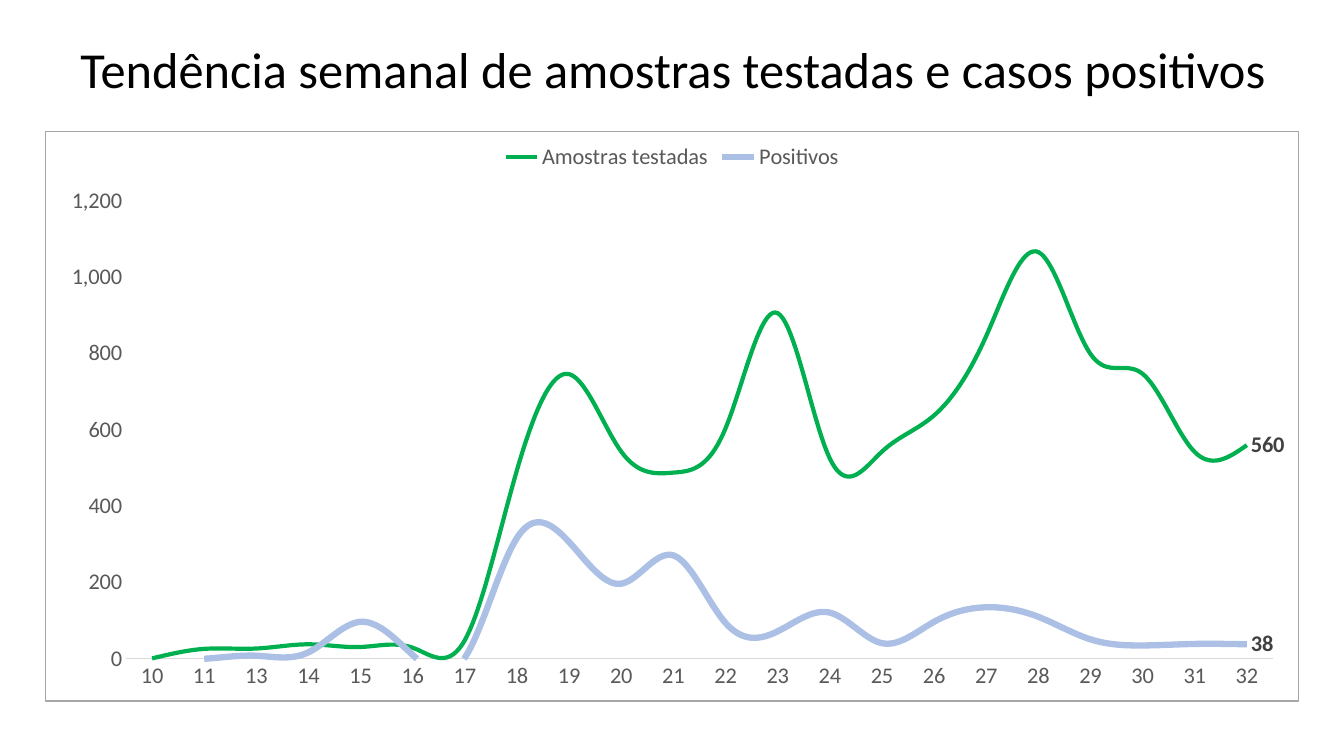
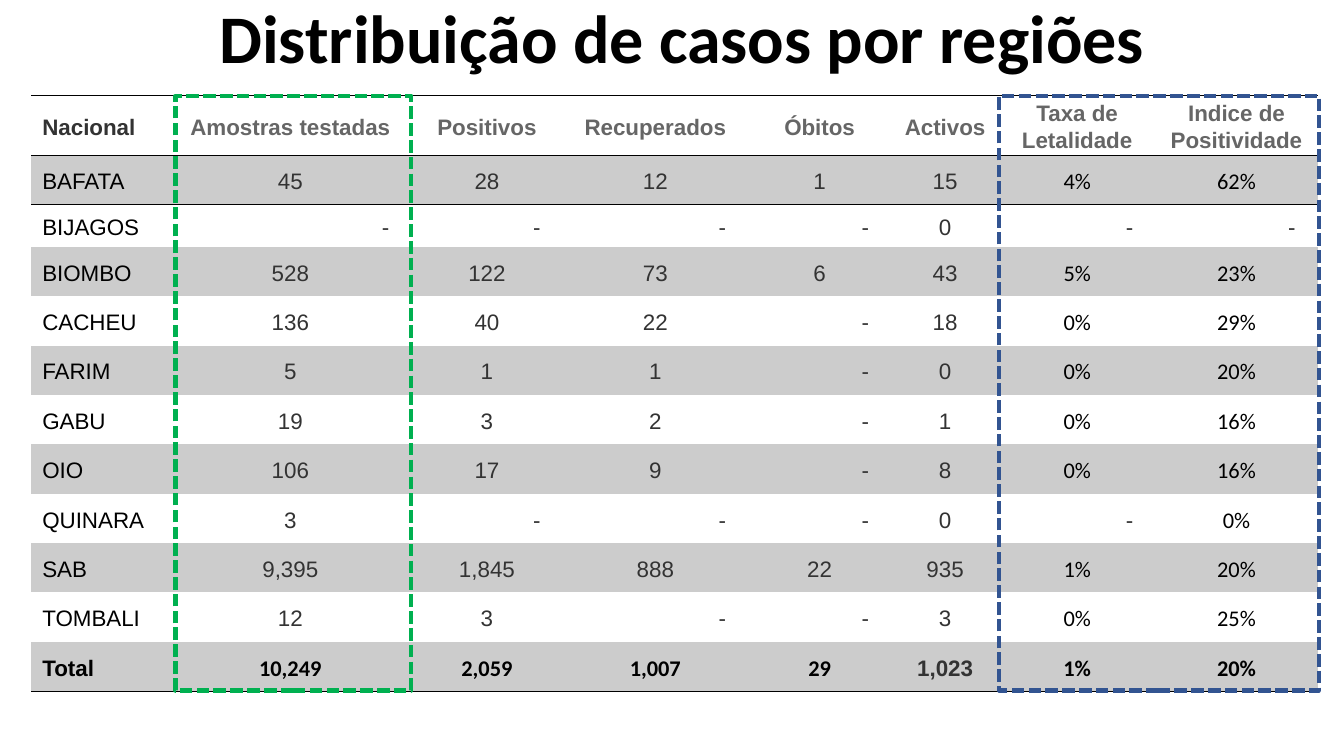
"""Build two slides on weekly testing trends and the regional case distribution."""
from lxml.etree import SubElement
from pptx import Presentation
from pptx.chart.data import CategoryChartData
from pptx.dml.color import RGBColor
from pptx.enum.chart import XL_CHART_TYPE, XL_LABEL_POSITION, XL_LEGEND_POSITION, XL_MARKER_STYLE, XL_TICK_MARK
from pptx.enum.dml import MSO_LINE
from pptx.enum.shapes import MSO_SHAPE
from pptx.enum.text import MSO_ANCHOR, PP_ALIGN
from pptx.oxml import parse_xml
from pptx.oxml.ns import nsdecls, qn
from pptx.util import Inches, Pt

BLACK = RGBColor(0x00, 0x00, 0x00)
INK = RGBColor(0x33, 0x33, 0x33)
LABEL = RGBColor(0x40, 0x40, 0x40)
AXIS_TEXT = RGBColor(0x59, 0x59, 0x59)
HEADER = RGBColor(0x66, 0x66, 0x66)
FRAME = RGBColor(0xA6, 0xA6, 0xA6)
BAND = RGBColor(0xCC, 0xCC, 0xCC)
AXIS_LINE = RGBColor(0xD9, 0xD9, 0xD9)
GREEN = RGBColor(0x00, 0xB0, 0x50)
PALE_BLUE = RGBColor(0xAB, 0xC0, 0xE4)
BLUE = RGBColor(0x32, 0x54, 0x91)

BODY_SIZE = 16
NO_STYLE = "{2D5ABB26-0587-4C30-8999-92F81FD0307C}"

WEEKS = ["10", "11", *(str(week) for week in range(13, 33))]
TRENDS = [
    ("Amostras testadas", GREEN, 3,
     [1, 26, 27, 38, 31, 29, 49, 495, 746, 543, 488, 604, 906, 525, 543, 638,
      846, 1066, 799, 747, 542, 560]),
    ("Positivos", PALE_BLUE, 4.5,
     [0, 0, 8, 17, 97, 10, 3, 317, 306, 197, 271, 94, 72, 121, 41, 97,
      135, 110, 51, 35, 39, 38]),
]
PLOT_AREA = {"x": 0.064, "y": 0.122, "w": 0.916, "h": 0.804}

REGIONS = [
    ("Nacional", "Amostras testadas", "Positivos", "Recuperados", "Óbitos", "Activos",
     "Taxa de Letalidade", "Indice de Positividade"),
    ("BAFATA", "45", "28", "12", "1", "15", "4%", "62%"),
    ("BIJAGOS", "-", "-", "-", "-", "0", "-", "-"),
    ("BIOMBO", "528", "122", "73", "6", "43", "5%", "23%"),
    ("CACHEU", "136", "40", "22", "-", "18", "0%", "29%"),
    ("FARIM", "5", "1", "1", "-", "0", "0%", "20%"),
    ("GABU", "19", "3", "2", "-", "1", "0%", "16%"),
    ("OIO", "106", "17", "9", "-", "8", "0%", "16%"),
    ("QUINARA", "3", "-", "-", "-", "0", "-", "0%"),
    ("SAB", "9,395", "1,845", "888", "22", "935", "1%", "20%"),
    ("TOMBALI", "12", "3", "-", "-", "3", "0%", "25%"),
    ("Total", "10,249", "2,059", "1,007", "29", "1,023", "1%", "20%"),
]
COLUMN_WIDTHS = [1.37, 2.4, 1.5, 1.84, 1.42, 1.07, 1.55, 1.61]
ROW_HEIGHTS = [0.58, 0.49, 0.42] + [0.49] * 9
TABLE_LEFT, TABLE_TOP = 0.31, 0.95
HIGHLIGHTS = [(1.74, 2.34, GREEN), (9.91, 3.17, BLUE)]
ACTIVE_COLUMN = 5


def style_font(font, size=BODY_SIZE, color=BLACK, bold=False, name="Calibri"):
    font.name, font.size, font.bold = name, Pt(size), bold
    font.color.rgb = color


def write_text(frame, text, align=PP_ALIGN.LEFT, spacing=0.9, **style):
    para = frame.paragraphs[0]
    para.alignment, para.line_spacing = align, spacing
    span = para.add_run()
    span.text = text
    style_font(span.font, **style)


def add_title(page, text, box, anchor, **style):
    frame = page.shapes.add_textbox(*map(Inches, box)).text_frame
    frame.word_wrap, frame.vertical_anchor = True, anchor
    write_text(frame, text, **style)


def add_trend_chart(page):
    data = CategoryChartData()
    data.categories = WEEKS
    for name, _, _, values in TRENDS:
        data.add_series(name, values)
    box = map(Inches, (0.45, 1.3, 12.43, 5.66))
    chart = page.shapes.add_chart(XL_CHART_TYPE.LINE, *box, data).chart
    style_font(chart.font)
    chart.has_title = False
    chart.has_legend = True
    chart.legend.position = XL_LEGEND_POSITION.TOP
    chart.legend.include_in_layout = False
    style_font(chart.legend.font, color=AXIS_TEXT)

    for axis in (chart.category_axis, chart.value_axis):
        axis.major_tick_mark = axis.minor_tick_mark = XL_TICK_MARK.NONE
        axis.has_major_gridlines = False
        style_font(axis.tick_labels.font, color=AXIS_TEXT)
    chart.category_axis.format.line.color.rgb = AXIS_LINE
    chart.category_axis.format.line.width = Pt(0.75)
    values = chart.value_axis
    values.minimum_scale, values.maximum_scale, values.major_unit = 0, 1200, 200
    values.format.line.fill.background()
    values.tick_labels.number_format = "#,##0"
    values.tick_labels.number_format_is_linked = False

    plot = chart.plots[0]
    plot.vary_by_categories = False
    for series, (_, color, width, _) in zip(plot.series, TRENDS):
        series.smooth = True
        series.marker.style = XL_MARKER_STYLE.NONE
        series.format.line.color.rgb = color
        series.format.line.width = Pt(width)
        label = series.points[len(WEEKS) - 1].data_label
        style_font(label.font, color=LABEL, bold=True)
        label.position = XL_LABEL_POSITION.RIGHT
    finish_chart_area(chart.element)


def finish_chart_area(space):
    area = space.find(".//" + qn("c:plotArea"))
    for old in area.findall(qn("c:layout")):
        area.remove(old)
    sizes = "".join(f'<c:{side} val="{share}"/>' for side, share in PLOT_AREA.items())
    area.insert(0, parse_xml(
        f'<c:layout {nsdecls("c")}><c:manualLayout><c:layoutTarget val="inner"/>'
        f'<c:xMode val="edge"/><c:yMode val="edge"/>{sizes}</c:manualLayout></c:layout>'))
    space.find(qn("c:chart")).addnext(parse_xml(
        f'<c:spPr {nsdecls("c", "a")}><a:noFill/><a:ln w="{Pt(0.75)}"><a:solidFill>'
        f'<a:srgbClr val="{FRAME}"/></a:solidFill></a:ln></c:spPr>'))


def add_border(cell, side):
    line = SubElement(cell._tc.get_or_add_tcPr(), qn(f"a:ln{side}"), w=str(Pt(1)))
    SubElement(SubElement(line, qn("a:solidFill")), qn("a:srgbClr"), val=str(BLACK))


def cell_style(row, column, text):
    total = row == len(REGIONS) - 1
    if row == 0:
        return {"name": "Arial", "bold": True, "color": HEADER if column else INK}
    if column == 0:
        return {"name": "Arial", "bold": total}
    if text != "-" and (column > ACTIVE_COLUMN or total and column != ACTIVE_COLUMN):
        return {"bold": total}
    return {"name": "Arial", "bold": total, "color": INK}


def fill_cell(cell, row, column, text):
    dash = text == "-"
    cell.vertical_anchor = MSO_ANCHOR.MIDDLE
    cell.margin_left, cell.margin_top, cell.margin_bottom = Inches(0.11), Inches(0.02), 0
    cell.margin_right = Inches(0.22 if dash else 0.11)
    align = PP_ALIGN.RIGHT if dash else PP_ALIGN.CENTER if column else PP_ALIGN.LEFT
    write_text(cell.text_frame, text, align=align, spacing=1.07, **cell_style(row, column, text))
    if row <= 1:
        add_border(cell, "T")
    if row in (0, len(REGIONS) - 1):
        add_border(cell, "B")
    if row % 2:
        cell.fill.solid()
        cell.fill.fore_color.rgb = BAND
    else:
        cell.fill.background()
    if row == len(REGIONS) - 1:
        cell.fill.solid()
        cell.fill.fore_color.rgb = BAND


def add_region_table(page):
    box = map(Inches, (TABLE_LEFT, TABLE_TOP, sum(COLUMN_WIDTHS), sum(ROW_HEIGHTS)))
    table = page.shapes.add_table(len(REGIONS), len(COLUMN_WIDTHS), *box).table
    table.first_row = table.horz_banding = False
    table._tbl.tblPr.find(qn("a:tableStyleId")).text = NO_STYLE
    for column, width in zip(table.columns, COLUMN_WIDTHS):
        column.width = Inches(width)
    for row, height in zip(table.rows, ROW_HEIGHTS):
        row.height = Inches(height)
    for row, texts in enumerate(REGIONS):
        for column, text in enumerate(texts):
            fill_cell(table.cell(row, column), row, column, text)


def add_highlight(page, left, width, color):
    box = map(Inches, (left, TABLE_TOP, width, sum(ROW_HEIGHTS)))
    shape = page.shapes.add_shape(MSO_SHAPE.RECTANGLE, *box)
    shape.shadow.inherit = False
    shape.fill.background()
    shape.line.color.rgb = color
    shape.line.width = Pt(3)
    shape.line.dash_style = MSO_LINE.SQUARE_DOT


def main():
    deck = Presentation()
    deck.slide_width, deck.slide_height = Inches(13.33), Inches(7.5)
    trend_page, region_page = (deck.slides.add_slide(deck.slide_layouts[6]) for _ in range(2))

    add_title(trend_page, "Tendência semanal de amostras testadas e casos positivos",
              (0.7, 0.29, 12.43, 0.85), MSO_ANCHOR.MIDDLE, size=36)
    add_trend_chart(trend_page)

    add_region_table(region_page)
    add_title(region_page, "Distribuição de casos por regiões", (0.58, 0.13, 12.37, 0.7),
              MSO_ANCHOR.BOTTOM, size=48.6, bold=True, align=PP_ALIGN.CENTER)
    for left, width, color in HIGHLIGHTS:
        add_highlight(region_page, left, width, color)
    deck.save("out.pptx")


if __name__ == "__main__":
    main()
